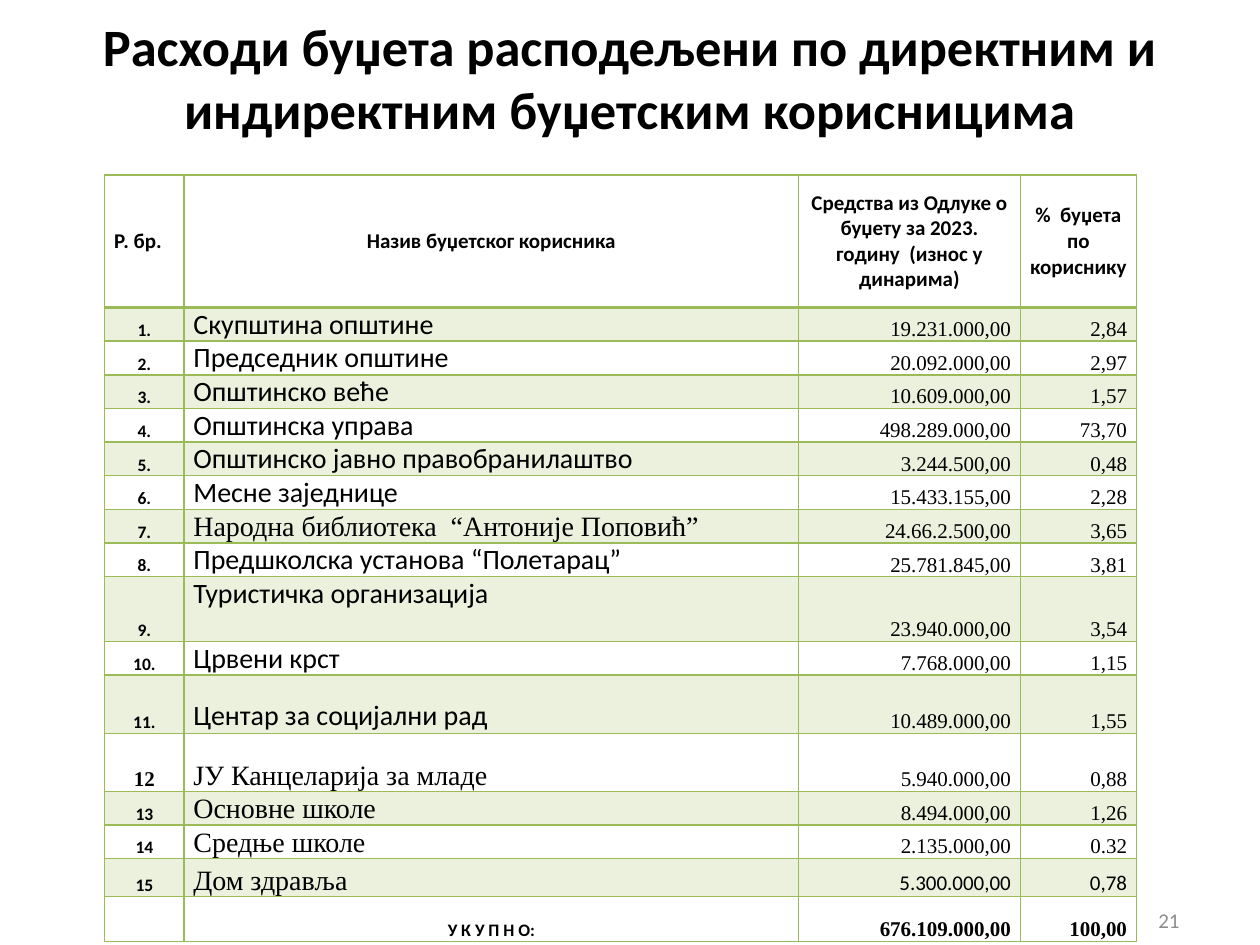
from lxml import etree
from pptx import Presentation
from pptx.dml.color import RGBColor
from pptx.enum import text
from pptx.oxml import ns
from pptx.util import Cm, Pt

BLACK = RGBColor(0, 0, 0)
GREY = RGBColor(0x8C, 0x8C, 0x8C)
GREEN = RGBColor(0x9B, 0xBB, 0x59)
SANS, SERIF = "Calibri", "Times New Roman"
LEFT, CENTER, RIGHT = text.PP_ALIGN.LEFT, text.PP_ALIGN.CENTER, text.PP_ALIGN.RIGHT
TOP, MIDDLE, BOTTOM = (text.MSO_ANCHOR.TOP, text.MSO_ANCHOR.MIDDLE,
                       text.MSO_ANCHOR.BOTTOM)

TITLE = "Расходи буџета расподељени по директним и индиректним буџетским корисницима"
HEADINGS = [
    "Р. бр.",
    "Назив буџетског корисника",
    "Средства из Одлуке о буџету за 2023. годину  (износ у динарима)",
    "%  буџета по кориснику",
]
# Number, beneficiary, font of the name, amount, share, row height in cm
BENEFICIARIES = [
    ("1.", "Скупштина општине", SANS, "19.231.000,00", "2,84", 0.64),
    ("2.", "Председник општине", SANS, "20.092.000,00", "2,97", 0.64),
    ("3.", "Општинско веће", SANS, "10.609.000,00", "1,57", 0.64),
    ("4.", "Општинска управа", SANS, "498.289.000,00", "73,70", 0.64),
    ("5.", "Општинско јавно правобранилаштво", SANS, "3.244.500,00", "0,48", 0.64),
    ("6.", "Месне заједнице", SANS, "15.433.155,00", "2,28", 0.64),
    ("7.", "Народна библиотека  “Антоније Поповић”", SERIF, "24.66.2.500,00", "3,65", 0.64),
    ("8.", "Предшколска установа “Полетарац”", SANS, "25.781.845,00", "3,81", 0.64),
    ("9.", "Туристичка организација", SANS, "23.940.000,00", "3,54", 1.31),
    ("10.", "Црвени крст", SANS, "7.768.000,00", "1,15", 0.64),
    ("11.", "Центар за социјални рад", SANS, "10.489.000,00", "1,55", 1.17),
    ("12", "ЈУ Канцеларија за младе", SERIF, "5.940.000,00", "0,88", 1.17),
    ("13", "Основне школе", SERIF, "8.494.000,00", "1,26", 0.64),
    ("14", "Средње школе", SERIF, "2.135.000,00", "0.32", 0.64),
    ("15", "Дом здравља", SERIF, "5.300.000,00", "0,78", 0.76),
]
TOTAL = ["", "У К У П Н О:", "676.109.000,00", "100,00"]
COLUMN_WIDTHS = [1.6, 12.39, 4.47, 2.34]
HEADER_HEIGHT, TOTAL_HEIGHT = 2.67, 0.91


def write(para, content, align, size, name=SANS, bold=False, color=BLACK):
    para.alignment = align
    span = para.add_run()
    span.text = content
    span.font.color.rgb = color
    for key, value in {"size": Pt(size), "name": name, "bold": bold}.items():
        setattr(span.font, key, value)


def add_text(page, place, content, align, size, **look):
    box = page.shapes.add_textbox(*map(Cm, place))
    box.text_frame.word_wrap = True
    box.text_frame.vertical_anchor = MIDDLE
    write(box.text_frame.paragraphs[0], content, align, size, **look)


def set_borders(cell, widths):
    properties = cell._tc.get_or_add_tcPr()
    for side, width in widths.items():
        line = etree.SubElement(properties, ns.qn(f"a:ln{side}"), w=str(Pt(width)))
        fill = etree.SubElement(line, ns.qn("a:solidFill"))
        etree.SubElement(fill, ns.qn("a:srgbClr"), val=str(GREEN))


def tint(cell):
    """Fill the cell with green at 20 % opacity."""
    cell.fill.solid()
    cell.fill.fore_color.rgb = GREEN
    color = cell._tc.tcPr.find(".//" + ns.qn("a:solidFill") + "[last()]/..")
    color = cell._tc.tcPr.find(ns.qn("a:solidFill")).find(ns.qn("a:srgbClr"))
    etree.SubElement(color, ns.qn("a:alpha"), val="20000")


def fill_cell(cell, content, align, size, anchor=BOTTOM, shaded=False,
              top=1, bottom=1, **look):
    margins = {"margin_left": Cm(0.19), "margin_right": Cm(0.19),
               "margin_top": 0, "margin_bottom": 0}
    for key, value in {**margins, "vertical_anchor": anchor}.items():
        setattr(cell, key, value)
    set_borders(cell, {"L": 1, "R": 1, "T": top, "B": bottom})
    if shaded:
        tint(cell)
    else:
        cell.fill.background()
    if content:
        write(cell.text_frame.paragraphs[0], content, align, size, **look)


def add_budget_table(page):
    heights = [HEADER_HEIGHT, *(entry[-1] for entry in BENEFICIARIES), TOTAL_HEIGHT]
    frame = page.shapes.add_table(len(heights), len(COLUMN_WIDTHS), Cm(2.11), Cm(3.53),
                                  Cm(sum(COLUMN_WIDTHS)), Cm(sum(heights)))
    table = frame.table
    table.first_row = table.horz_banding = False
    for column, width in zip(table.columns, COLUMN_WIDTHS):
        column.width = Cm(width)
    for row, height in zip(table.rows, heights):
        row.height = Cm(height)

    # Header
    for col, heading in enumerate(HEADINGS):
        fill_cell(table.cell(0, col), heading, CENTER if col else LEFT, 12,
                  anchor=MIDDLE, bottom=2, bold=True)

    # Beneficiaries, every other row shaded
    for row, (number, name, font, amount, share, _) in enumerate(BENEFICIARIES, 1):
        band = {"shaded": row % 2 == 1, "top": 2 if row == 1 else 1}
        number_look = {"size": 12, "name": SERIF} if number == "12" else {"size": 10}
        figure_font = SANS if number == "15" else SERIF
        fill_cell(table.cell(row, 0), number, CENTER, bold=True, **number_look, **band)
        fill_cell(table.cell(row, 1), name, LEFT, 16, name=font,
                  anchor=TOP if number == "9." else BOTTOM, **band)
        for col, figure in enumerate((amount, share), 2):
            fill_cell(table.cell(row, col), figure, RIGHT, 12, name=figure_font, **band)

    # Total
    for col, content in enumerate(TOTAL):
        look = (RIGHT, 12, SERIF) if col > 1 else (CENTER, 10, SANS)
        align, size, font = look
        fill_cell(table.cell(len(heights) - 1, col), content, align, size,
                  name=font, bold=True)


def main():
    deck = Presentation()
    deck.slide_width, deck.slide_height = Cm(25.4), Cm(19.05)
    page = deck.slides.add_slide(deck.slide_layouts[6])
    add_text(page, (1.27, 0, 22.86, 3.12), TITLE, CENTER, 30, bold=True)
    add_budget_table(page)
    # Page number
    add_text(page, (18.11, 18.03, 5.92, 1.02), "21", RIGHT, 12, color=GREY)
    deck.save("out.pptx")


if __name__ == "__main__":
    main()
